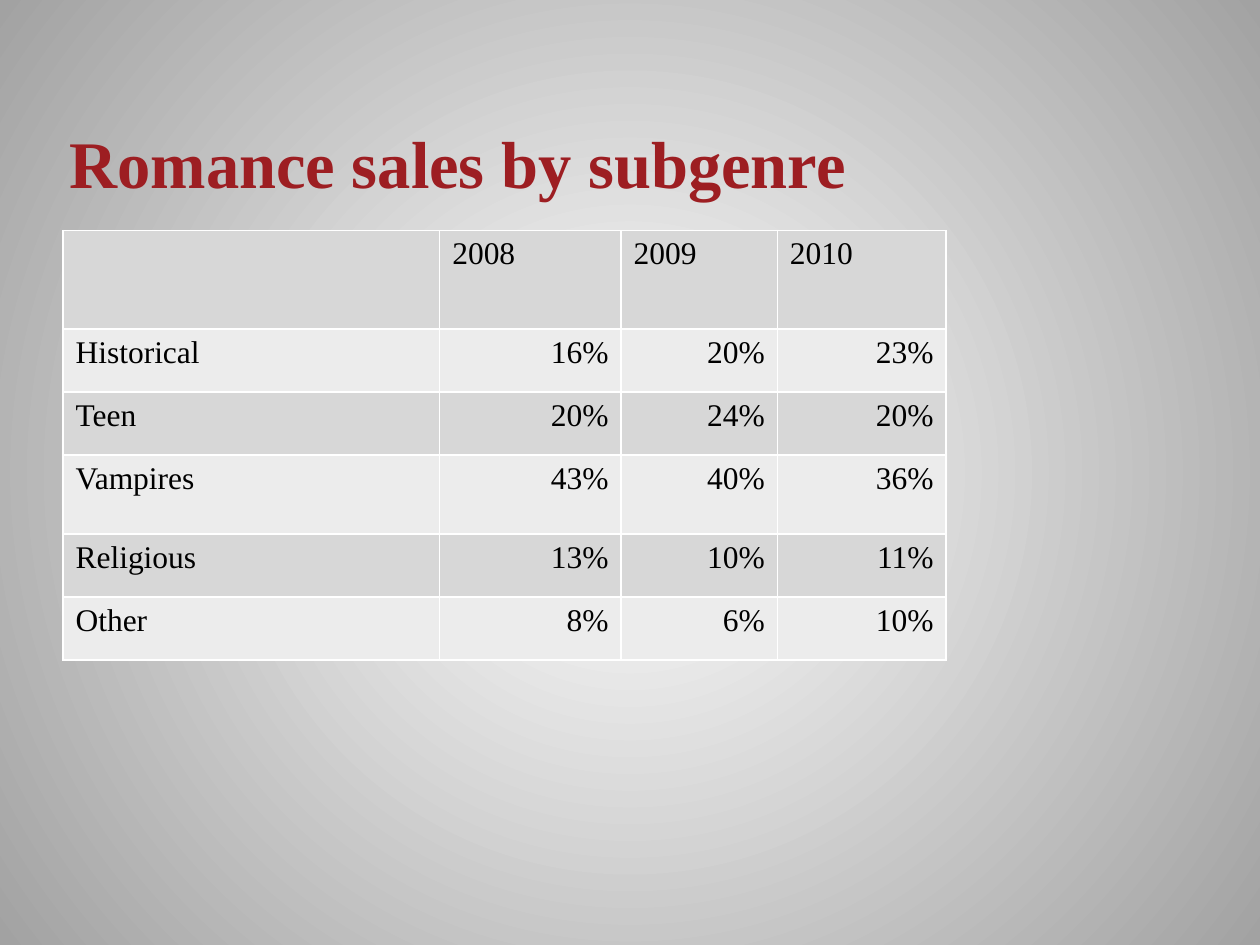
from lxml import etree
from pptx import Presentation
from pptx.dml.color import RGBColor
from pptx.enum import text
from pptx.oxml import ns
from pptx.util import Inches, Pt

HEADING = "Romance sales by subgenre"
SALES = [
    ("", "2008", "2009", "2010"),
    ("Historical", "16%", "20%", "23%"),
    ("Teen", "20%", "24%", "20%"),
    ("Vampires", "43%", "40%", "36%"),
    ("Religious", "13%", "10%", "11%"),
    ("Other", "8%", "6%", "10%"),
]
COLUMN_WIDTHS = [2.99, 1.44, 1.24, 1.34]
ROW_HEIGHTS = [0.78, 0.5, 0.5, 0.63, 0.5, 0.5]


class Theme:
    font = "Times New Roman"
    heading_size, cell_size = 38, 18
    heading, ink, border = "9D1E22", "000000", "FFFFFF"
    bands = ["D7D7D7", "ECECEC"]
    center, edge = "FFFFFF", "A2A2A2"


def add_run(paragraph, words, size, color, bold=False):
    run = paragraph.add_run()
    run.text = words
    run.font.name = Theme.font
    run.font.size = Pt(size)
    run.font.bold = bold
    run.font.color.rgb = RGBColor.from_string(color)


def paint_background(slide):
    fill = slide.background.fill
    fill.gradient()
    for stop, color, position in zip(fill.gradient_stops, (Theme.center, Theme.edge), (0, 1)):
        stop.color.rgb = RGBColor.from_string(color)
        stop.position = position
    gradient = slide.element.xpath(".//p:bg//a:gradFill")[0]
    gradient.remove(gradient.find(ns.qn("a:lin")))
    circle = etree.SubElement(gradient, ns.qn("a:path"), path="circle")
    etree.SubElement(circle, ns.qn("a:fillToRect"), l="50000", t="50000", r="50000", b="50000")


def add_heading(slide):
    heading = slide.shapes.add_textbox(Inches(0.5), Inches(0.35), Inches(7.92), Inches(1.25))
    frame = heading.text_frame
    frame.word_wrap = True
    frame.vertical_anchor = text.MSO_ANCHOR.BOTTOM
    frame.margin_left = frame.margin_right = Inches(0.05)
    frame.margin_top = frame.margin_bottom = 0
    add_run(frame.paragraphs[0], HEADING, Theme.heading_size, Theme.heading, bold=True)


def add_borders(cell):
    properties = cell._tc.get_or_add_tcPr()
    for side in ("lnL", "lnR", "lnT", "lnB"):
        line = etree.SubElement(properties, ns.qn("a:" + side), w=str(Pt(1)))
        solid = etree.SubElement(line, ns.qn("a:solidFill"))
        etree.SubElement(solid, ns.qn("a:srgbClr"), val=Theme.border)


def add_sales(slide):
    sales = slide.shapes.add_table(
        len(SALES), len(COLUMN_WIDTHS), Inches(0.5), Inches(1.83),
        Inches(sum(COLUMN_WIDTHS)), Inches(sum(ROW_HEIGHTS))).table
    for column, width in zip(sales.columns, COLUMN_WIDTHS):
        column.width = Inches(width)
    for row, height in zip(sales.rows, ROW_HEIGHTS):
        row.height = Inches(height)
    for r, entries in enumerate(SALES):
        for c, entry in enumerate(entries):
            cell = sales.cell(r, c)
            add_borders(cell)
            cell.fill.solid()
            cell.fill.fore_color.rgb = RGBColor.from_string(Theme.bands[r % 2])
            paragraph = cell.text_frame.paragraphs[0]
            if r and c:
                paragraph.alignment = text.PP_ALIGN.RIGHT
            if entry:
                add_run(paragraph, entry, Theme.cell_size, Theme.ink)


def main():
    deck = Presentation()
    deck.slide_width, deck.slide_height = Inches(10), Inches(7.5)
    slide = deck.slides.add_slide(deck.slide_layouts[6])
    paint_background(slide)
    add_heading(slide)
    add_sales(slide)
    deck.save("out.pptx")


if __name__ == "__main__":
    main()
